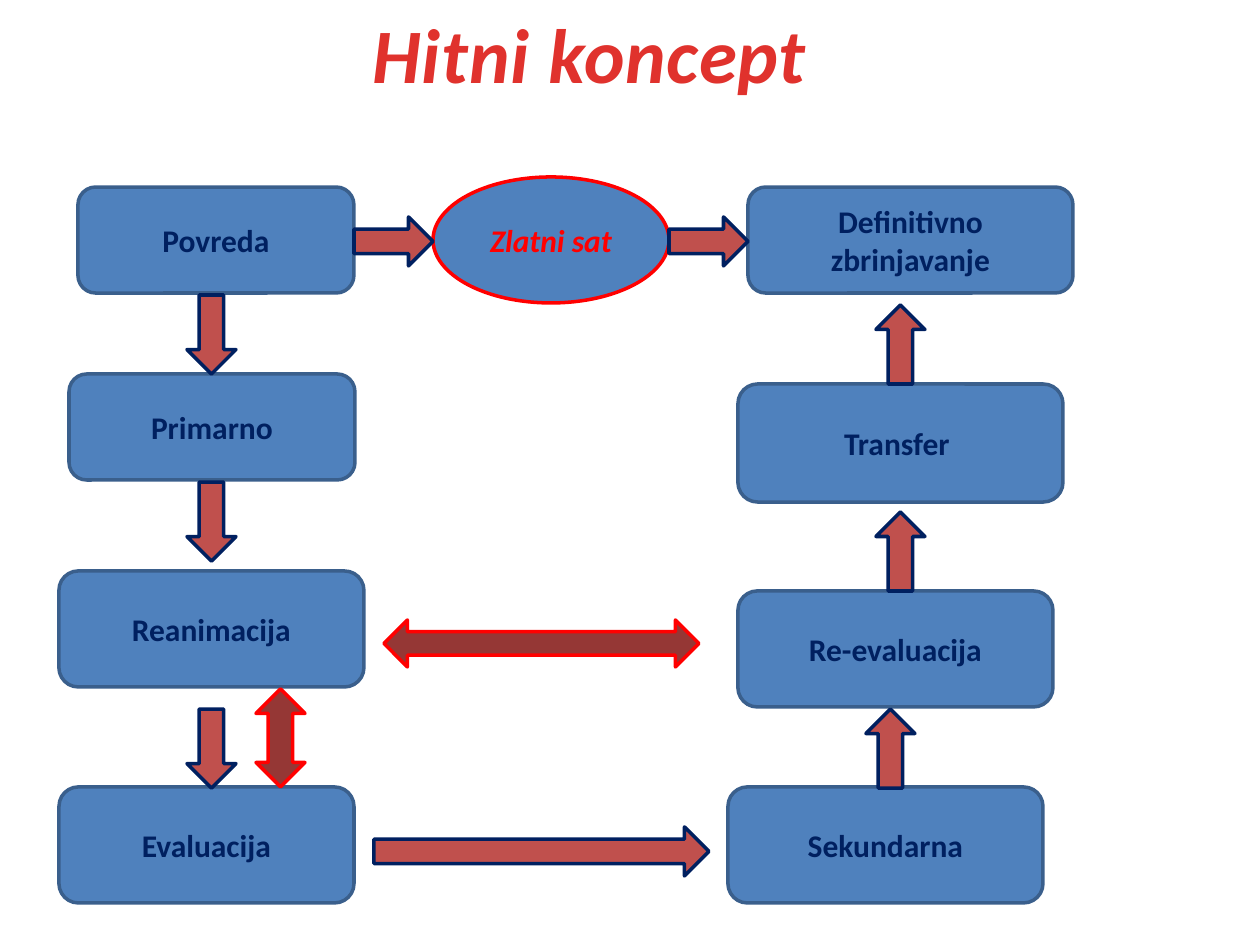
from typing import NamedTuple

from pptx import Presentation
from pptx import util as u
from pptx.dml.color import RGBColor
from pptx.enum import shapes, text

PX = u.Inches(1) / 126
FONT = "Calibri"
COLORS = {
    "blue": "4F81BD",
    "blue_edge": "3A5F8C",
    "navy": "002060",
    "brick": "C0504D",
    "dark_red": "953735",
    "red": "FF0000",
    "title": "E0322D",
}
KIND = shapes.MSO_SHAPE


class Box(NamedTuple):
    left: int
    top: int
    width: int
    height: int


class Step(NamedTuple):
    label: str
    box: Box


STEPS = [
    Step("Povreda", Box(78, 187, 276, 106)),
    Step("Primarno", Box(69, 374, 286, 106)),
    Step("Reanimacija", Box(59, 571, 305, 116)),
    Step("Evaluacija", Box(59, 787, 295, 116)),
    Step("Sekundarna", Box(728, 787, 315, 116)),
    Step("Re-evaluacija", Box(738, 591, 315, 116)),
    Step("Transfer ", Box(738, 384, 325, 118)),
    Step("Definitivno zbrinjavanje", Box(748, 187, 325, 106)),
]
GOLDEN_HOUR = Step("Zlatni sat", Box(433, 177, 236, 126))

THICK, SHORT = 49, 79
FLOW_ARROWS = [
    *[(KIND.DOWN_ARROW, Box(187, top, THICK, SHORT)) for top in (295, 482, 709)],
    (KIND.RIGHT_ARROW, Box(374, 827, 335, THICK)),
    *[(KIND.UP_ARROW, Box(left, top, THICK, SHORT))
      for left, top in ((866, 709), (876, 512), (876, 305))],
    *[(KIND.RIGHT_ARROW, Box(left, 217, SHORT, THICK)) for left in (354, 669)],
]
FEEDBACK_ARROWS = [
    (KIND.UP_DOWN_ARROW, Box(256, 689, THICK, 98)),
    (KIND.LEFT_RIGHT_ARROW, Box(384, 620, 315, 47)),
]


def color(name: str) -> RGBColor:
    return RGBColor.from_string(COLORS[name])


def emu(box: Box) -> list[u.Emu]:
    return [u.Emu(round(value * PX)) for value in box]


def add_shape(slide, kind, box: Box, fill: str, line: str):
    shape = slide.shapes.add_shape(kind, *emu(box))
    shape.shadow.inherit = False
    shape.fill.solid()
    shape.fill.fore_color.rgb = color(fill)
    shape.line.color.rgb = color(line)
    shape.line.width = u.Pt(2)
    return shape


def write(shape, label: str, size: int, ink: str, italic: bool = False):
    """Fill the shape with one centred bold paragraph and return it."""
    paragraph = shape.text_frame.paragraphs[0]
    paragraph.text = label
    paragraph.alignment = text.PP_ALIGN.CENTER
    font = paragraph.font
    font.name, font.size = FONT, u.Pt(size)
    font.bold, font.italic = True, italic
    font.color.rgb = color(ink)
    return paragraph


def add_step(slide, step: Step, kind, line: str, ink: str, italic: bool = False) -> None:
    shape = add_shape(slide, kind, step.box, "blue", line)
    shape.text_frame.word_wrap = True
    shape.text_frame.vertical_anchor = text.MSO_ANCHOR.MIDDLE
    write(shape, step.label, 18, ink, italic)


def add_title(slide) -> None:
    title = slide.shapes.add_textbox(*emu(Box(286, 0, 607, 106)))
    title.text_frame.word_wrap = False
    title.text_frame.auto_size = text.MSO_AUTO_SIZE.SHAPE_TO_FIT_TEXT
    paragraph = write(title, "Hitni koncept", 44, "title", italic=True)
    paragraph._p.get_or_add_pPr().get_or_add_defRPr().set("spc", "50")


def main() -> None:
    presentation = Presentation()
    presentation.slide_width, presentation.slide_height = u.Inches(10), u.Inches(7.5)
    slide = presentation.slides.add_slide(presentation.slide_layouts[6])
    for step in STEPS:
        add_step(slide, step, KIND.ROUNDED_RECTANGLE, "blue_edge", "navy")
    add_step(slide, GOLDEN_HOUR, KIND.OVAL, "red", "red", italic=True)
    for kind, box in FLOW_ARROWS:
        add_shape(slide, kind, box, "brick", "navy")
    add_title(slide)
    for kind, box in FEEDBACK_ARROWS:
        add_shape(slide, kind, box, "dark_red", "red")
    presentation.save("out.pptx")


if __name__ == "__main__":
    main()
